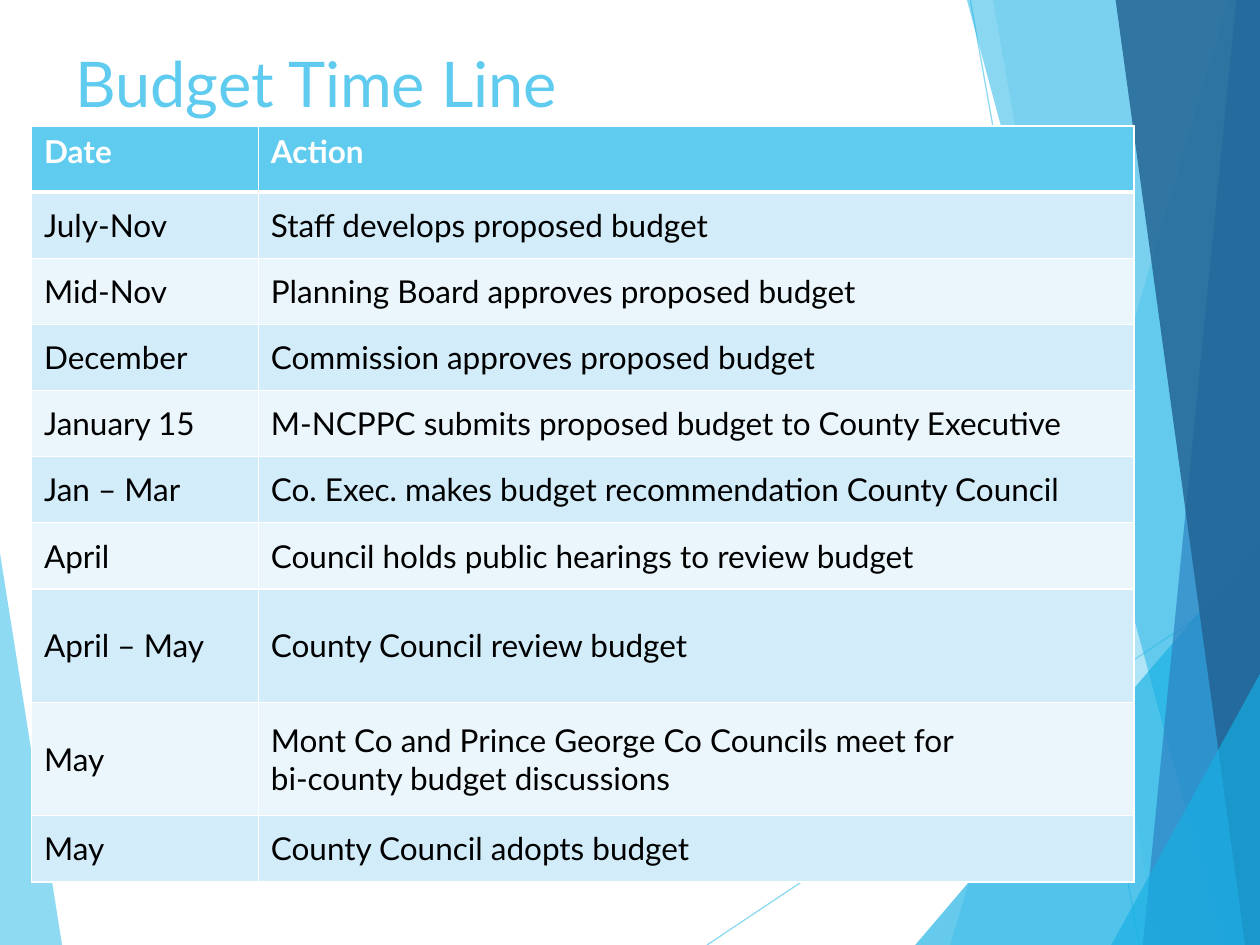
from lxml import etree
from pptx import Presentation
from pptx.dml.color import RGBColor
from pptx.enum import shapes, text
from pptx.oxml import ns
from pptx.util import Pt

FONT = "Lato"
COLORS = {
    "sky": "5FCBEF", "cyan": "17B0E4", "blue": "2E83C3", "navy": "226292",
    "band_dark": "D2ECF9", "band_light": "EAF6FC",
    "white": "FFFFFF", "black": "000000",
}
WIDTH, HEIGHT = 720, 540

# Facets from back to front: corner points, colour, opacity in percent
LEFT_FACET = ([(0, 316), (35.5, HEIGHT), (0, HEIGHT)], "sky", 70)
RIGHT_FACETS = [
    # (x at top, x at bottom) of the slanted left edge
    (702, 543, "sky", 36),
    (567.5, 661.5, "sky", 20),
    (None, 523, "cyan", 66),
    (552.5, 698.5, "cyan", 50),
    (706.5, 653, "blue", 70),
    (637.5, 711.5, "navy", 82),
    (None, 635, "cyan", 66),
]
TRIANGLE_TOPS = {523: 309, 635: 385}
RAYS = [((404, 540), (720, 329)), ((554.5, 0), (651, 540))]

TIMELINE = [
    ("Date", "Action"),
    ("July-Nov", "Staff develops proposed budget"),
    ("Mid-Nov", "Planning Board approves proposed budget"),
    ("December", "Commission approves proposed budget"),
    ("January 15", "M-NCPPC submits proposed budget to County Executive"),
    ("Jan – Mar", "Co. Exec. makes budget recommendation County Council"),
    ("April", "Council holds public hearings to review budget"),
    ("April – May", "County Council review budget"),
    ("May", "Mont Co and Prince George Co Councils meet for\vbi-county budget discussions"),
    ("May", "County Council adopts budget"),
]
TALL_ROWS = (7, 8)


def rgb(name):
    return RGBColor.from_string(COLORS[name])


def set_opacity(element, percent):
    color = element.find(".//" + ns.qn("a:srgbClr"))
    etree.SubElement(color, ns.qn("a:alpha"), val=str(percent * 1000))


def add_facet(slide, corners, color, opacity):
    start, *rest = [(Pt(x), Pt(y)) for x, y in corners]
    builder = slide.shapes.build_freeform(*start)
    builder.add_line_segments(rest, close=True)
    facet = builder.convert_to_shape()
    facet.shadow.inherit = False
    facet.line.fill.background()
    facet.fill.solid()
    facet.fill.fore_color.rgb = rgb(color)
    set_opacity(facet.fill._xPr.find(ns.qn("a:solidFill")), opacity)


def add_ray(slide, start, end):
    ray = slide.shapes.add_connector(
        shapes.MSO_CONNECTOR.STRAIGHT, *(Pt(v) for v in start + end))
    ray.line.width = Pt(0.75)
    ray.line.color.rgb = rgb("sky")
    properties = ray._element.spPr
    set_opacity(properties, 70)
    etree.SubElement(properties, ns.qn("a:effectLst"))


def add_backdrop(slide, right, bottom):
    add_facet(slide, *LEFT_FACET)
    for start, end in RAYS:
        add_ray(slide, start, end)
    for top_x, bottom_x, color, opacity in RIGHT_FACETS:
        if top_x is None:
            upper = [(right, TRIANGLE_TOPS[bottom_x])]
        else:
            upper = [(top_x, 0), (right, 0)]
        add_facet(slide, upper + [(right, bottom), (bottom_x, bottom)], color, opacity)


def place_title(slide, left, top, width, height):
    title = slide.shapes.title
    title.left, title.top, title.width, title.height = map(Pt, (left, top, width, height))
    frame = title.text_frame
    frame.text = "Budget Time Line"
    frame.vertical_anchor = text.MSO_ANCHOR.TOP
    heading = frame.paragraphs[0]
    heading.alignment = text.PP_ALIGN.LEFT
    heading.font.name, heading.font.size = FONT, Pt(36)
    heading.font.color.rgb = rgb("sky")


def set_borders(cell, widths):
    properties = cell._tc.get_or_add_tcPr()
    for position, (side, width) in enumerate(widths.items()):
        border = etree.Element(ns.qn(f"a:ln{side}"), w=str(Pt(width)))
        fill = etree.SubElement(border, ns.qn("a:solidFill"))
        etree.SubElement(fill, ns.qn("a:srgbClr"), val=COLORS["white"])
        properties.insert(position, border)


def add_timeline(slide, left, top, width, height):
    date_width, tall = 129.6, 64.8
    short = (height - tall * len(TALL_ROWS)) / (len(TIMELINE) - len(TALL_ROWS))
    table = slide.shapes.add_table(
        len(TIMELINE), 2, *map(Pt, (left, top, width, height))).table
    table.columns[0].width = Pt(date_width)
    table.columns[1].width = Pt(width - date_width)

    for r, entries in enumerate(TIMELINE):
        header = r == 0
        table.rows[r].height = Pt(tall if r in TALL_ROWS else short)
        band = "sky" if header else "band_dark" if r % 2 else "band_light"
        for c, entry in enumerate(entries):
            cell = table.cell(r, c)
            cell.text = entry
            cell.vertical_anchor = text.MSO_ANCHOR.TOP if header else text.MSO_ANCHOR.MIDDLE
            cell.fill.solid()
            cell.fill.fore_color.rgb = rgb(band)
            set_borders(cell, {"L": 1, "R": 1, "T": 3 if r == 1 else 1, "B": 3 if header else 1})
            font = cell.text_frame.paragraphs[0].font
            font.name, font.size, font.bold = FONT, Pt(18), header
            font.color.rgb = rgb("white" if header else "black")


def main():
    deck = Presentation()
    deck.slide_width, deck.slide_height = Pt(WIDTH), Pt(HEIGHT)
    slide = deck.slides.add_slide(deck.slide_layouts[5])
    add_backdrop(slide, WIDTH, HEIGHT)
    place_title(slide, 36, 21.6, 648, 90)
    add_timeline(slide, 18, 72, 630, 432)
    deck.save("out.pptx")


if __name__ == "__main__":
    main()
